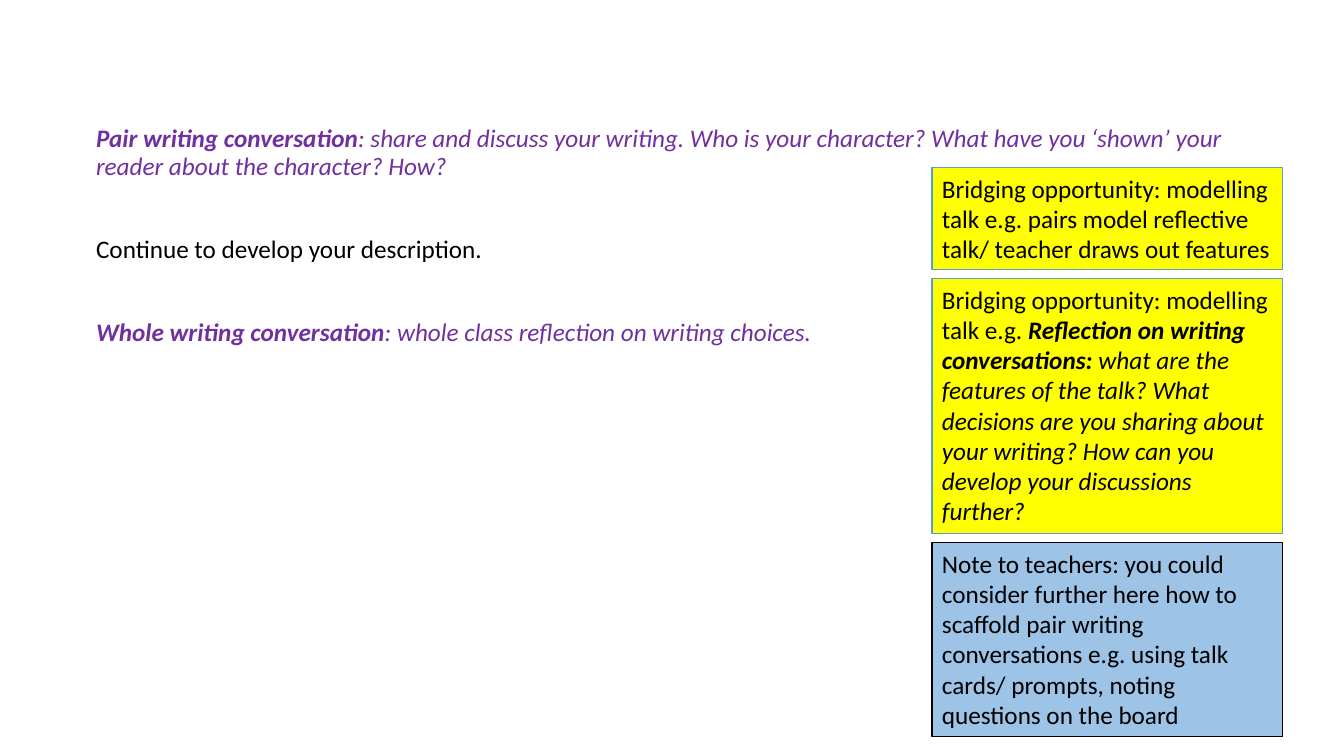
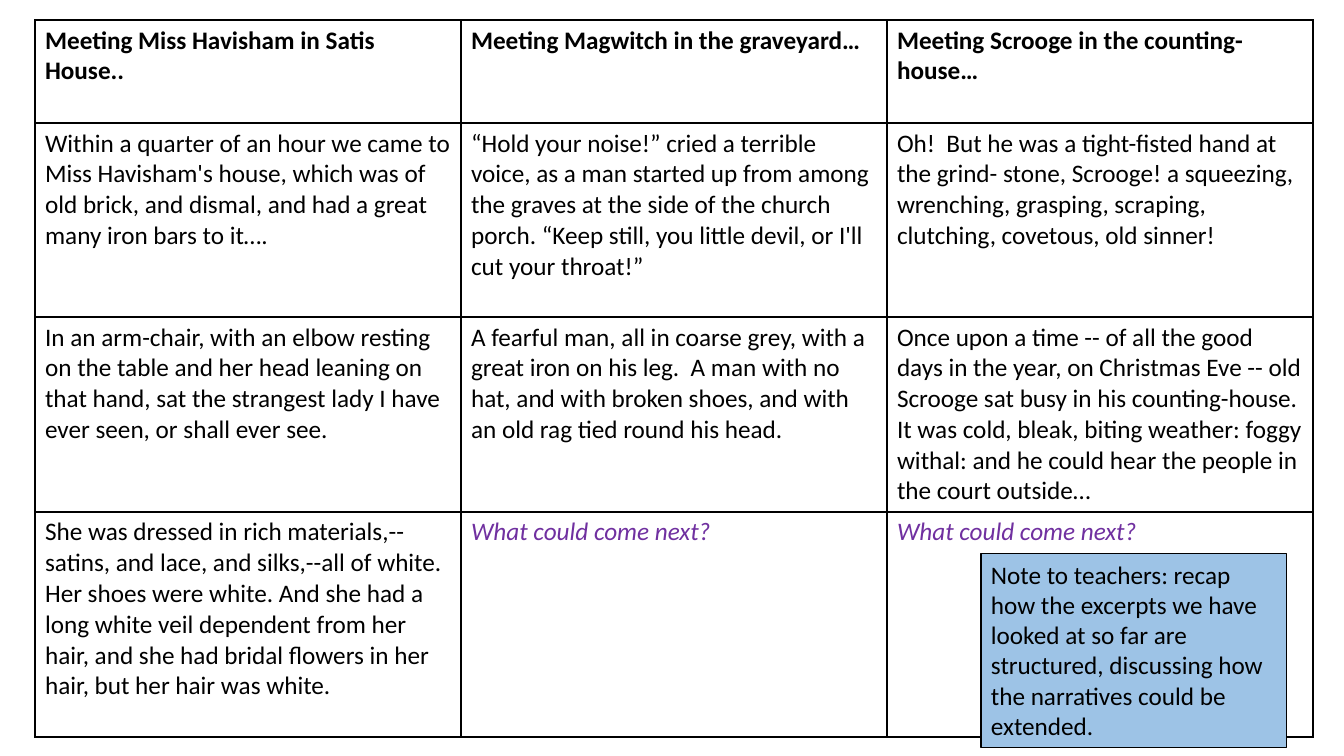
"""Build two lesson slides on writing conversations and story openings."""
from lxml import etree
from pptx import Presentation
from pptx.dml.color import RGBColor
from pptx.enum.text import MSO_AUTO_SIZE, MSO_VERTICAL_ANCHOR, PP_ALIGN
from pptx.oxml.ns import qn
from pptx.util import Emu, Pt

PX = 914400 / 100.8
FONT = "Calibri"
BLACK = RGBColor(0x00, 0x00, 0x00)
WHITE = RGBColor(0xFF, 0xFF, 0xFF)
PURPLE = RGBColor(0x70, 0x30, 0xA0)
YELLOW = RGBColor(0xFF, 0xFF, 0x00)
BLUE = RGBColor(0x5B, 0x9B, 0xD5)
PALE_BLUE = RGBColor(0x9D, 0xC3, 0xE6)
TOP = MSO_VERTICAL_ANCHOR.TOP
GROW = MSO_AUTO_SIZE.SHAPE_TO_FIT_TEXT
FIXED = MSO_AUTO_SIZE.NONE
LEFT = PP_ALIGN.LEFT


def px(*lengths):
    return [Emu(round(length * PX)) for length in lengths]


def write(paragraph, runs, color=BLACK):
    paragraph.alignment = LEFT
    paragraph.font.name = FONT
    paragraph.font.size = Pt(18)
    paragraph.font.color.rgb = color
    for text, bold, italic in runs:
        run = paragraph.add_run()
        run.text = text
        run.font.name = FONT
        run.font.size = Pt(18)
        run.font.color.rgb = color
        run.font.bold = bold
        run.font.italic = italic


prs = Presentation()
prs.slide_width, prs.slide_height = px(1344, 756)
content_layout, blank_layout = prs.slide_layouts[1], prs.slide_layouts[6]

conversation_slide = prs.slides.add_slide(content_layout)
unused_title = conversation_slide.shapes.title.element
unused_title.getparent().remove(unused_title)

instructions = conversation_slide.placeholders[1]
instructions.left, instructions.top, instructions.width, instructions.height = px(86, 121, 1159, 480)
instructions_frame = instructions.text_frame
instructions_frame.auto_size = FIXED
instructions_frame.vertical_anchor = TOP
steps = [
    (PURPLE, [
        ("Pair writing conversation", True, True),
        (": share and discuss your writing. Who is your character? What have you ‘shown’ your "
         "reader about the character? How?", False, True)]),
    (BLACK, [("Continue to develop your description.", False, False)]),
    (PURPLE, [
        ("Whole writing conversation", True, True),
        (": whole class reflection on writing choices.", False, True)]),
]
for index, (color, runs) in enumerate(steps):
    step = instructions_frame.add_paragraph() if index else instructions_frame.paragraphs[0]
    write(step, runs, color)
    step.line_spacing = 0.9
    step.space_before = Pt(40 if index else 0)
    step_properties = step._p.get_or_add_pPr()
    step_properties.set("marL", "0")
    step_properties.set("indent", "0")
    bullet_none = etree.Element(qn("a:buNone"))
    step_properties.find(qn("a:defRPr")).addprevious(bullet_none)

excerpt_slide = prs.slides.add_slide(blank_layout)
excerpts = [
    ["Meeting Miss Havisham in Satis House..",
     "Meeting Magwitch in the graveyard…",
     "Meeting Scrooge in the counting-house…"],
    ["Within a quarter of an hour we came to Miss Havisham's house, which was of old brick, "
     "and dismal, and had a great many iron bars to it….",
     "“Hold your noise!” cried a terrible voice, as a man started up from among the graves "
     "at the side of the church porch. “Keep still, you little devil, or I'll cut your throat!”",
     "Oh!  But he was a tight-fisted hand at the grind- stone, Scrooge! a squeezing, "
     "wrenching, grasping, scraping, clutching, covetous, old sinner!"],
    ["In an arm-chair, with an elbow resting on the table and her head leaning on that hand, "
     "sat the strangest lady I have ever seen, or shall ever see.",
     "A fearful man, all in coarse grey, with a great iron on his leg.  A man with no hat, "
     "and with broken shoes, and with an old rag tied round his head.",
     "Once upon a time -- of all the good days in the year, on Christmas Eve -- old Scrooge "
     "sat busy in his counting-house. It was cold, bleak, biting weather: foggy withal: and "
     "he could hear the people in the court outside…"],
    ["She was dressed in rich materials,--satins, and lace, and silks,--all of white. Her "
     "shoes were white. And she had a long white veil dependent from her hair, and she had "
     "bridal flowers in her hair, but her hair was white.",
     "What could come next?",
     "What could come next?"],
]
row_heights = px(103, 194, 195, 225)
excerpt_table = excerpt_slide.shapes.add_table(4, 3, *px(35, 20, 1278, 717)).table
excerpt_table.horz_banding = False
for column in excerpt_table.columns:
    column.width = px(426)[0]
for row_index, (row, height, texts) in enumerate(zip(excerpt_table.rows, row_heights, excerpts)):
    row.height = height
    for cell, text in zip(row.cells, texts):
        is_prompt = text == "What could come next?"
        write(cell.text_frame.paragraphs[0], [(text, row_index == 0, is_prompt)],
              PURPLE if is_prompt else BLACK)
        cell_properties = cell._tc.get_or_add_tcPr()
        for side in ("a:lnL", "a:lnR", "a:lnT", "a:lnB"):
            border = etree.SubElement(cell_properties, qn(side), w=str(Pt(1)))
            border_fill = etree.SubElement(border, qn("a:solidFill"))
            etree.SubElement(border_fill, qn("a:srgbClr"), val=str(BLACK))
        cell.fill.solid()
        cell.fill.fore_color.rgb = WHITE

NOTE_TOP, NOTE_GAP = 168, 9
bridging = [
    (102, YELLOW, BLUE, [
        ("Bridging opportunity: modelling talk e.g. pairs model reflective talk/ teacher draws "
         "out features", False, False)]),
    (255, YELLOW, BLUE, [
        ("Bridging opportunity: modelling talk e.g. ", False, False),
        ("Reflection on writing conversations: ", True, True),
        ("what are the features of the talk? What decisions are you sharing about your writing? "
         "How can you develop your discussions further?", False, True)]),
    (194, PALE_BLUE, BLACK, [
        ("Note to teachers: you could consider further here how to scaffold pair writing "
         "conversations e.g. using talk cards/ prompts, noting questions on the board",
         False, False)]),
]
notes = []
next_top = NOTE_TOP
for height, fill, outline, runs in bridging:
    notes.append((conversation_slide, (932, next_top, 351, height), fill, outline, runs))
    next_top += height + NOTE_GAP
notes.append((excerpt_slide, (981, 554, 306, 194), PALE_BLUE, BLACK, [
    ("Note to teachers: recap how the excerpts we have looked at so far are structured, "
     "discussing how the narratives could be extended.", False, False)]))

for slide, bounds, fill, outline, runs in notes:
    note = slide.shapes.add_textbox(*px(*bounds))
    note.fill.solid()
    note.fill.fore_color.rgb = fill
    note.line.color.rgb = outline
    note.line.width = Pt(0.75)
    note.text_frame.word_wrap = True
    note.text_frame.auto_size = GROW
    write(note.text_frame.paragraphs[0], runs)

prs.save("out.pptx")
